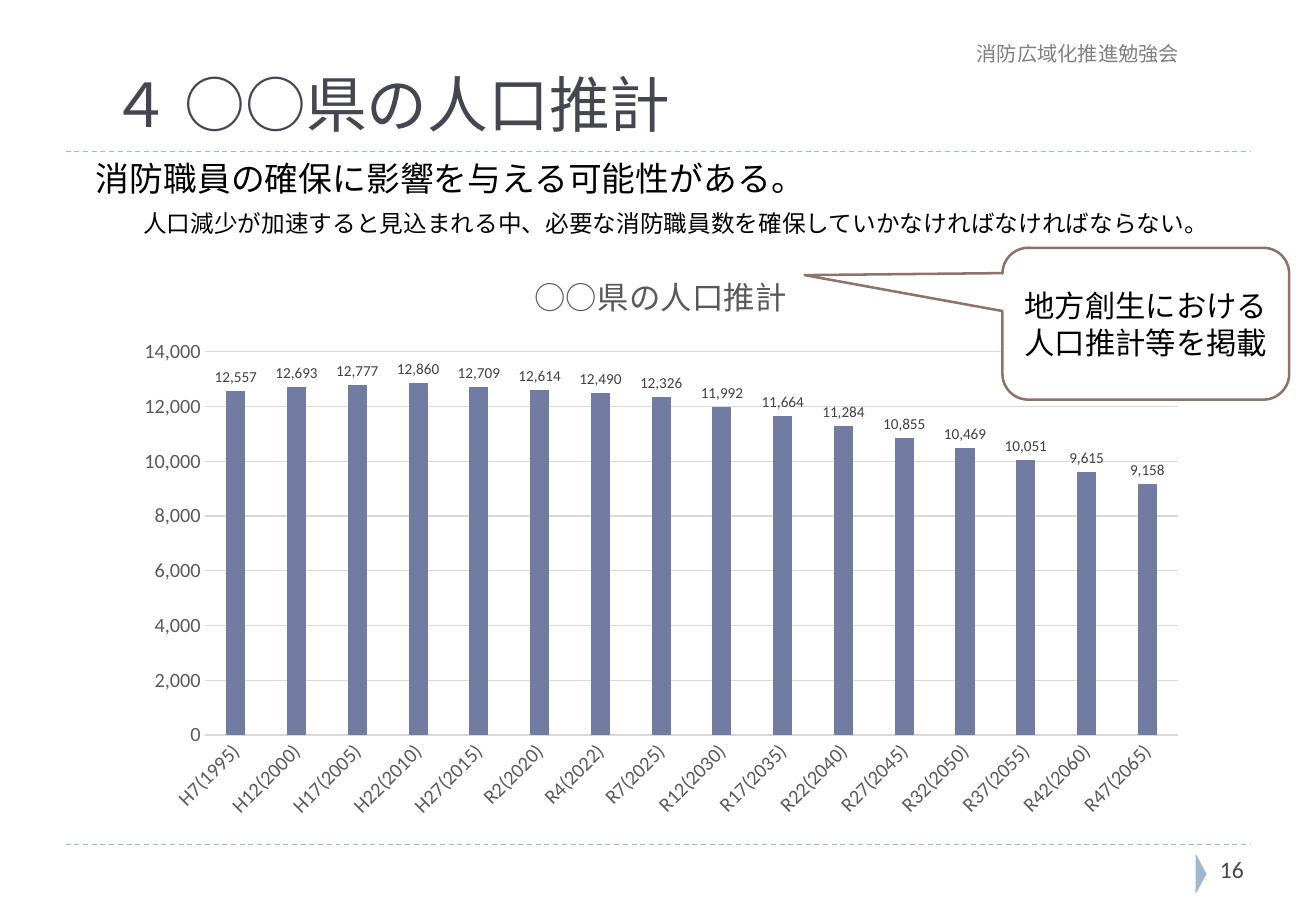
from pptx import Presentation
from pptx.chart.data import CategoryChartData
from pptx.dml.color import RGBColor
from pptx.enum.chart import XL_CHART_TYPE, XL_LABEL_POSITION, XL_TICK_MARK
from pptx.enum.dml import MSO_LINE
from pptx.enum.shapes import MSO_CONNECTOR, MSO_SHAPE
from pptx.enum.text import MSO_ANCHOR, PP_ALIGN
from pptx.oxml.ns import qn
from pptx.util import Inches, Pt
from lxml.etree import SubElement

WHITE = RGBColor(0xFF, 0xFF, 0xFF)
BLACK = RGBColor(0x00, 0x00, 0x00)
SLATE = RGBColor(0x46, 0x46, 0x53)
GRAY = RGBColor(0x80, 0x80, 0x80)
AXIS_GRAY = RGBColor(0x59, 0x59, 0x59)
LABEL_GRAY = RGBColor(0x40, 0x40, 0x40)
GRID_GRAY = RGBColor(0xD9, 0xD9, 0xD9)
PALE_BLUE = RGBColor(0x9F, 0xB8, 0xCD)
BAR_BLUE = RGBColor(0x72, 0x7C, 0xA3)
BROWN = RGBColor(0x8E, 0x73, 0x6A)
BODY_FONT = "Calibri"
CHART_TITLE = "○○県の人口推計"

presentation = Presentation()
presentation.slide_width = Inches(10.83)
presentation.slide_height = Inches(7.5)
slide = presentation.slides.add_slide(presentation.slide_layouts[6])
shapes = slide.shapes


def style_font(font, size, color, name=BODY_FONT):
    font.size = Pt(size)
    font.color.rgb = color
    font.name = name
    font.bold = False


def write_text(shape, *lines, size, color=BLACK, name=BODY_FONT,
               anchor=MSO_ANCHOR.TOP, align=PP_ALIGN.LEFT, space_before=0):
    frame = shape.text_frame
    frame.word_wrap = True
    frame.vertical_anchor = anchor
    frame.text = "\n".join(lines)
    for paragraph in frame.paragraphs:
        paragraph.alignment = align
        paragraph.space_before = Pt(space_before)
        style_font(paragraph.runs[0].font, size, color, name)
    return frame.paragraphs


# Dashed rules and page marker
for rule_top in (1.25, 6.95):
    rule = shapes.add_connector(MSO_CONNECTOR.STRAIGHT, Inches(0.54), Inches(rule_top),
                                Inches(10.29), Inches(rule_top))
    rule.line.color.rgb = PALE_BLUE
    rule.line.width = Pt(0.75)
    rule.line.dash_style = MSO_LINE.DASH
    SubElement(rule._element.spPr, qn("a:effectLst"))

marker = shapes.add_shape(MSO_SHAPE.ISOSCELES_TRIANGLE, Inches(9.72), Inches(7.15),
                          Inches(0.33), Inches(0.09))
marker.rotation = 90
marker.shadow.inherit = False
marker.fill.solid()
marker.fill.fore_color.rgb = PALE_BLUE
marker.line.fill.background()

# Title, header and page number
title = shapes.add_textbox(Inches(0.81), Inches(0.41), Inches(9.06), Inches(0.79))
write_text(title, "４ ○○県の人口推計", size=36, color=SLATE, name="Roboto Slab",
           anchor=MSO_ANCHOR.BOTTOM)
header = shapes.add_textbox(Inches(7.94), Inches(0.29), Inches(2.13), Inches(0.3))
write_text(header, "消防広域化推進勉強会", size=12, color=GRAY)
page_number = shapes.add_textbox(Inches(9.94), Inches(6.99), Inches(0.77), Inches(0.4))
write_text(page_number, "16", size=14, color=SLATE)

# Message with an indented explanation
message = shapes.add_textbox(Inches(0.69), Inches(1.25), Inches(9.39), Inches(1.25))
headline, explanation = write_text(
    message,
    "消防職員の確保に影響を与える可能性がある。",
    "人口減少が加速すると見込まれる中、必要な消防職員数を確保していかなければなければならない。",
    size=20, space_before=6)
explanation.runs[0].font.size = Pt(14)
explanation._p.get_or_add_pPr().set("marL", str(Inches(0.39)))

# Population chart
population = {
    "H7(1995)": 12557, "H12(2000)": 12693, "H17(2005)": 12777, "H22(2010)": 12860,
    "H27(2015)": 12709, "R2(2020)": 12614, "R4(2022)": 12490, "R7(2025)": 12326,
    "R12(2030)": 11992, "R17(2035)": 11664, "R22(2040)": 11284, "R27(2045)": 10855,
    "R32(2050)": 10469, "R37(2055)": 10051, "R42(2060)": 9615, "R47(2065)": 9158,
}
chart_data = CategoryChartData(number_format="#,##0")
chart_data.categories = list(population)
chart_data.add_series(CHART_TITLE, list(population.values()))
chart = shapes.add_chart(XL_CHART_TYPE.COLUMN_CLUSTERED, Inches(1.01), Inches(2.02),
                         Inches(8.86), Inches(4.81), chart_data).chart
style_font(chart.font, 10, BLACK)
chart.has_legend = False
chart.has_title = True
chart.chart_title.include_in_layout = False
chart.chart_title.text_frame.text = CHART_TITLE
style_font(chart.chart_title.text_frame.paragraphs[0].runs[0].font, 18.6, AXIS_GRAY)

# Axes
for axis in (chart.category_axis, chart.value_axis):
    axis.major_tick_mark = XL_TICK_MARK.NONE
    axis.minor_tick_mark = XL_TICK_MARK.NONE
    style_font(axis.tick_labels.font, 12, AXIS_GRAY)
chart.category_axis.format.line.color.rgb = GRID_GRAY
chart.category_axis.format.line.width = Pt(0.75)
chart.category_axis._element.txPr.bodyPr.set("rot", str(-45 * 60000))
value_axis = chart.value_axis
value_axis.minimum_scale = 0
value_axis.maximum_scale = 14000
value_axis.major_unit = 2000
value_axis.format.line.fill.background()
value_axis.major_gridlines.format.line.color.rgb = GRID_GRAY
value_axis.major_gridlines.format.line.width = Pt(0.75)
value_axis.tick_labels.number_format = "#,##0"
value_axis.tick_labels.number_format_is_linked = False

# Bars and value labels
plot = chart.plots[0]
plot.gap_width = 219
plot.vary_by_categories = False
bars = plot.series[0]
bars.format.fill.solid()
bars.format.fill.fore_color.rgb = BAR_BLUE
labels = bars.data_labels
labels.show_value = True
labels.position = XL_LABEL_POSITION.OUTSIDE_END
labels.number_format = "#,##0"
labels.number_format_is_linked = False
style_font(labels.font, 9, LABEL_GRAY)

# Callout pointing at the chart title
callout = shapes.add_shape(MSO_SHAPE.ROUNDED_RECTANGULAR_CALLOUT, Inches(8.25), Inches(2.04),
                           Inches(2.36), Inches(1.25))
for index, value in enumerate((-1.19, -0.32, 0.17)):
    callout.adjustments[index] = value
callout.shadow.inherit = False
callout.fill.solid()
callout.fill.fore_color.rgb = WHITE
callout.line.color.rgb = BROWN
callout.line.width = Pt(1.5)
write_text(callout, "地方創生における人口推計等を掲載", size=18,
           anchor=MSO_ANCHOR.MIDDLE, align=PP_ALIGN.CENTER)

presentation.save("out.pptx")
